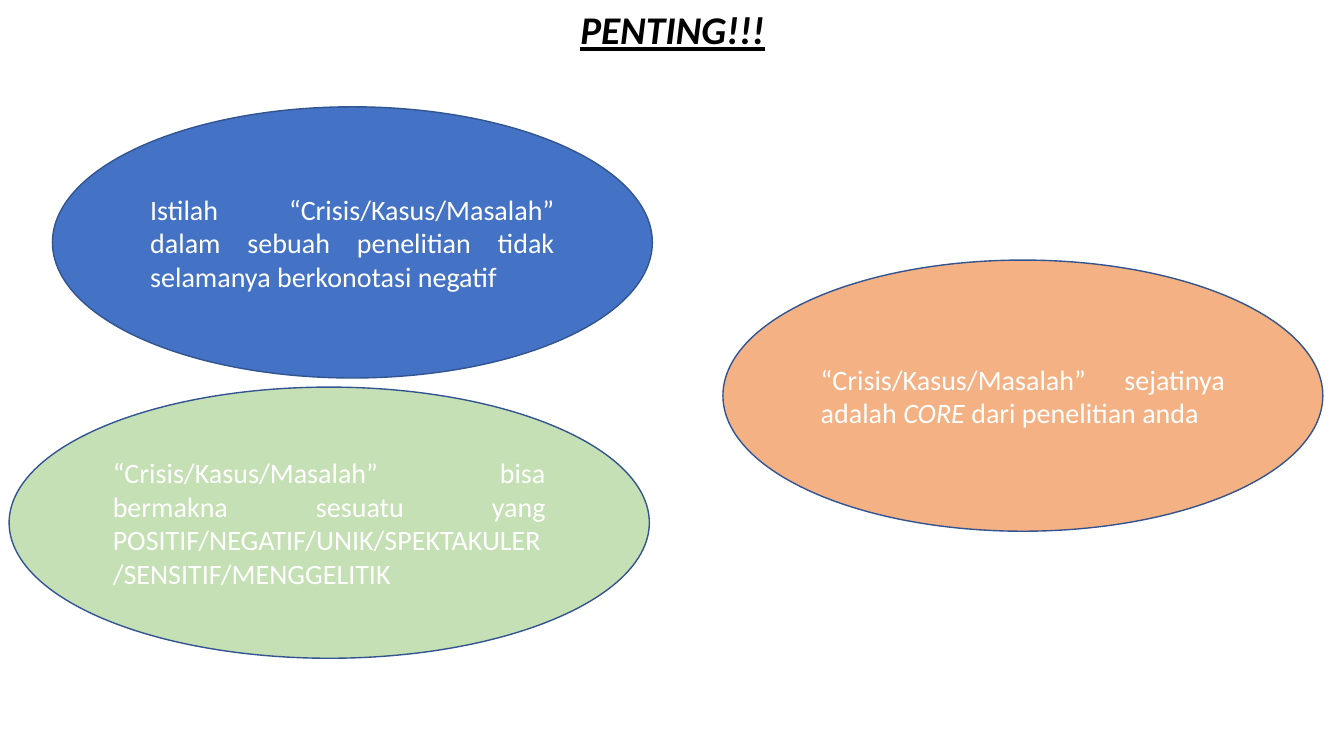
from dataclasses import dataclass

from pptx import Presentation
from pptx.dml.color import RGBColor
from pptx.enum import shapes, text
from pptx.slide import Slide
from pptx.text.text import _Paragraph as Paragraph
from pptx.util import Inches, Pt

COLORS = {
    "black": "000000",
    "white": "FFFFFF",
    "blue": "4472C4",
    "orange": "F4B183",
    "green": "C5E0B4",
    "outline": "325491",
}
FONT = "Calibri"
ELLIPSE_HEIGHT = 2.69


@dataclass(frozen=True)
class Run:
    text: str
    italic: bool = False


@dataclass(frozen=True)
class Statement:
    left: float
    top: float
    width: float
    fill: str
    runs: tuple[Run, ...]


STATEMENTS = (
    Statement(0.52, 1.06, 5.95, "blue", (
        Run("Istilah “Crisis/Kasus/Masalah” dalam sebuah penelitian "
            "tidak selamanya berkonotasi negatif"),
    )),
    Statement(7.17, 2.58, 5.95, "orange", (
        Run("“Crisis/Kasus/Masalah” sejatinya adalah "),
        Run("CORE", italic=True),
        Run(" dari penelitian anda"),
    )),
    Statement(0.09, 3.84, 6.35, "green", (
        Run("“Crisis/Kasus/Masalah” bisa bermakna sesuatu yang "
            "POSITIF/NEGATIF/UNIK/SPEKTAKULER/SENSITIF/MENGGELITIK"),
    )),
)


def color(name: str) -> RGBColor:
    return RGBColor.from_string(COLORS[name])


def add_run(paragraph: Paragraph, content: Run, size: int, color_name: str,
            emphasis: bool = False) -> None:
    """Add a run; emphasis makes it bold and underlined."""
    run = paragraph.add_run()
    run.text = content.text
    run.font.name = FONT
    run.font.size = Pt(size)
    run.font.color.rgb = color(color_name)
    run.font.italic = content.italic
    run.font.bold = emphasis
    run.font.underline = emphasis


def format_title(slide: Slide) -> None:
    title = slide.shapes.title
    title.left, title.top = Inches(0.92), Inches(0.06)
    title.width, title.height = Inches(11.5), Inches(0.6)
    frame = title.text_frame
    frame.auto_size = text.MSO_AUTO_SIZE.NONE
    frame.vertical_anchor = text.MSO_ANCHOR.TOP
    paragraph = frame.paragraphs[0]
    paragraph.alignment = text.PP_ALIGN.CENTER
    paragraph.line_spacing = 0.9
    add_run(paragraph, Run("PENTING!!!", italic=True), 28, "black", emphasis=True)


def add_statement(slide: Slide, statement: Statement) -> None:
    ellipse = slide.shapes.add_shape(
        shapes.MSO_SHAPE.OVAL, Inches(statement.left), Inches(statement.top),
        Inches(statement.width), Inches(ELLIPSE_HEIGHT))
    ellipse.shadow.inherit = False
    ellipse.fill.solid()
    ellipse.fill.fore_color.rgb = color(statement.fill)
    ellipse.line.color.rgb = color("outline")
    ellipse.line.width = Pt(1)
    frame = ellipse.text_frame
    frame.word_wrap = True
    frame.vertical_anchor = text.MSO_ANCHOR.MIDDLE
    paragraph = frame.paragraphs[0]
    paragraph.alignment = text.PP_ALIGN.JUSTIFY
    for run in statement.runs:
        add_run(paragraph, run, 20, "white")


def main() -> None:
    presentation = Presentation()
    presentation.slide_width = Inches(13.33)
    presentation.slide_height = Inches(7.5)
    title_only = presentation.slide_layouts.get_by_name("Title Only")
    slide = presentation.slides.add_slide(title_only)
    format_title(slide)
    for statement in STATEMENTS:
        add_statement(slide, statement)
    presentation.save("out.pptx")


if __name__ == "__main__":
    main()
